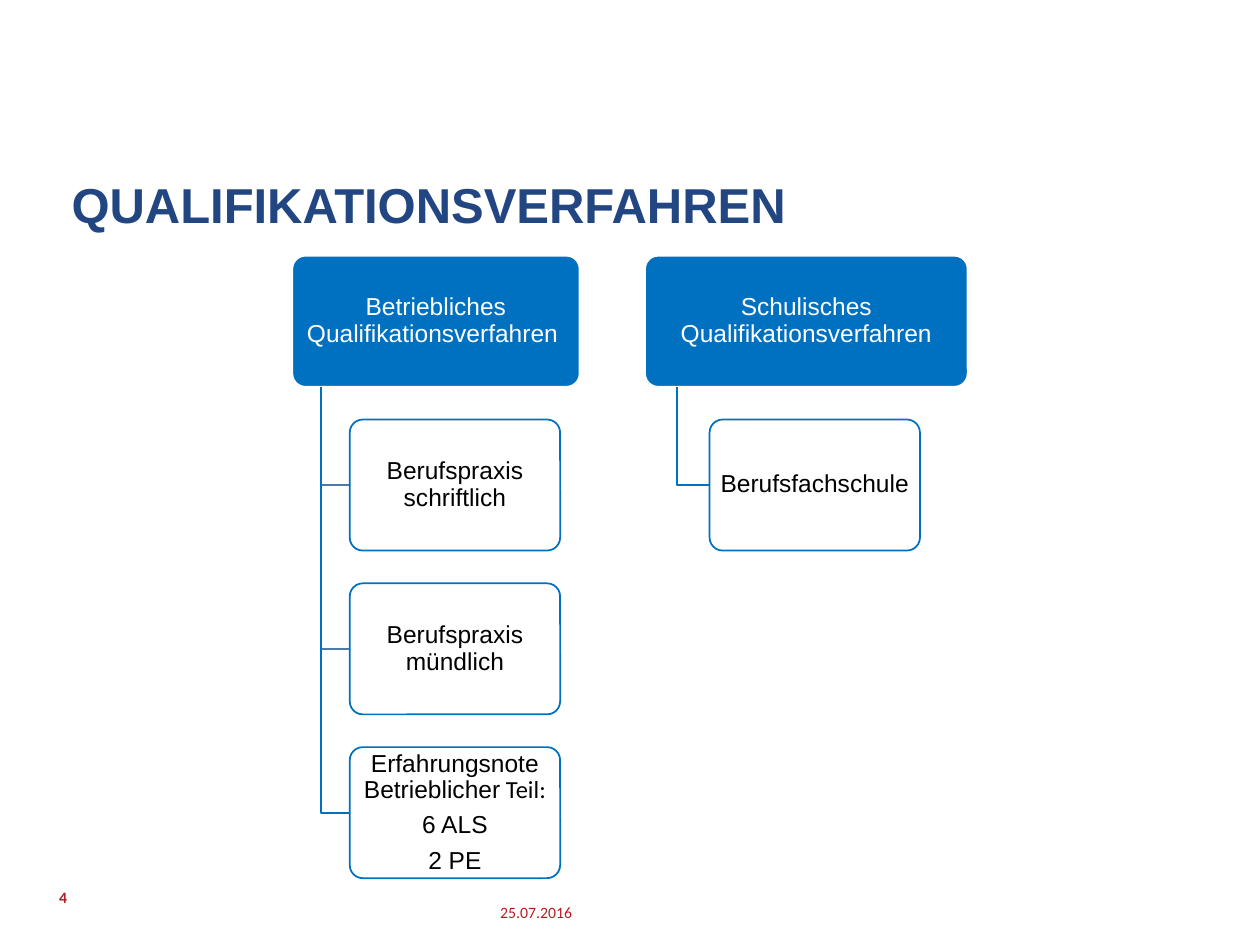
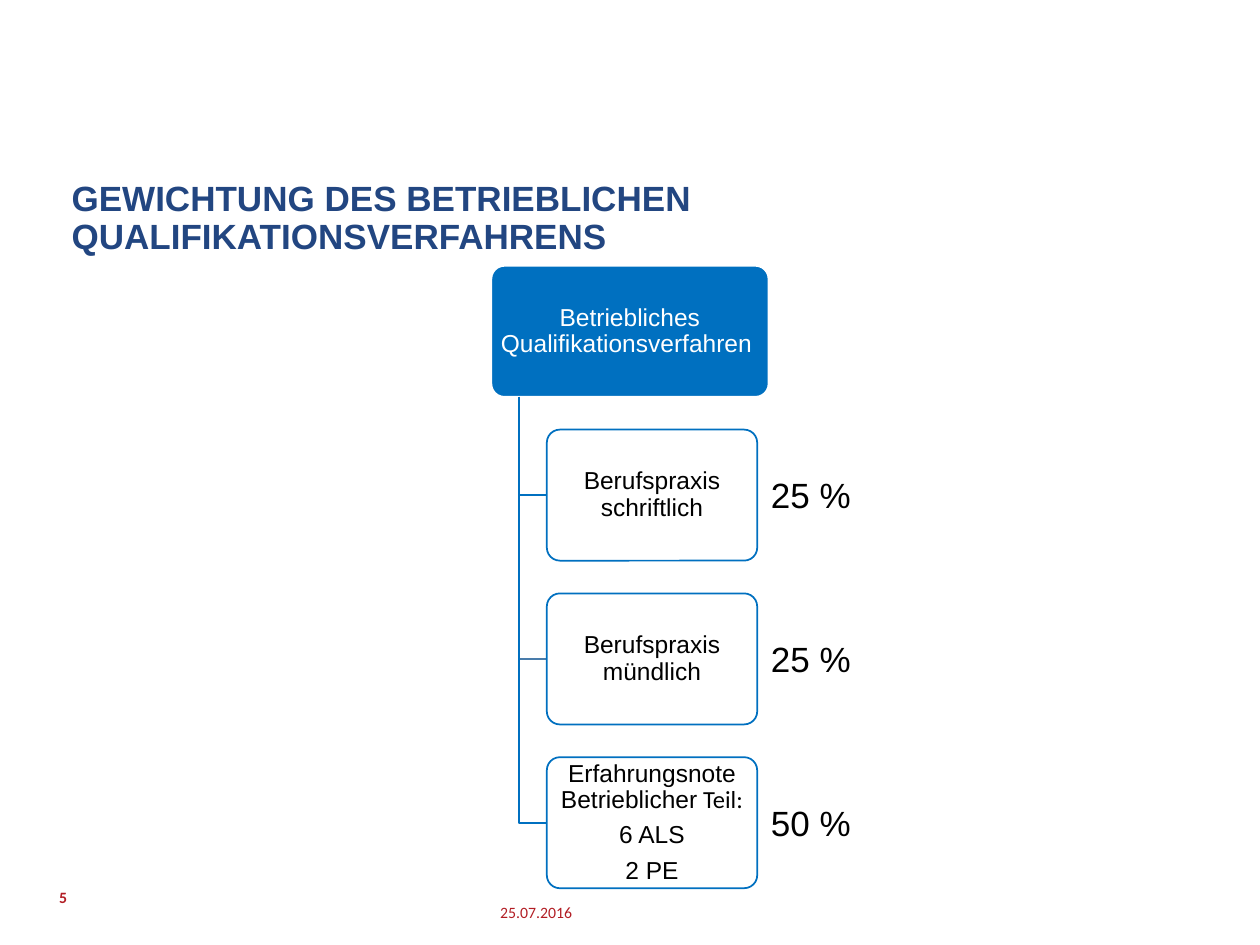
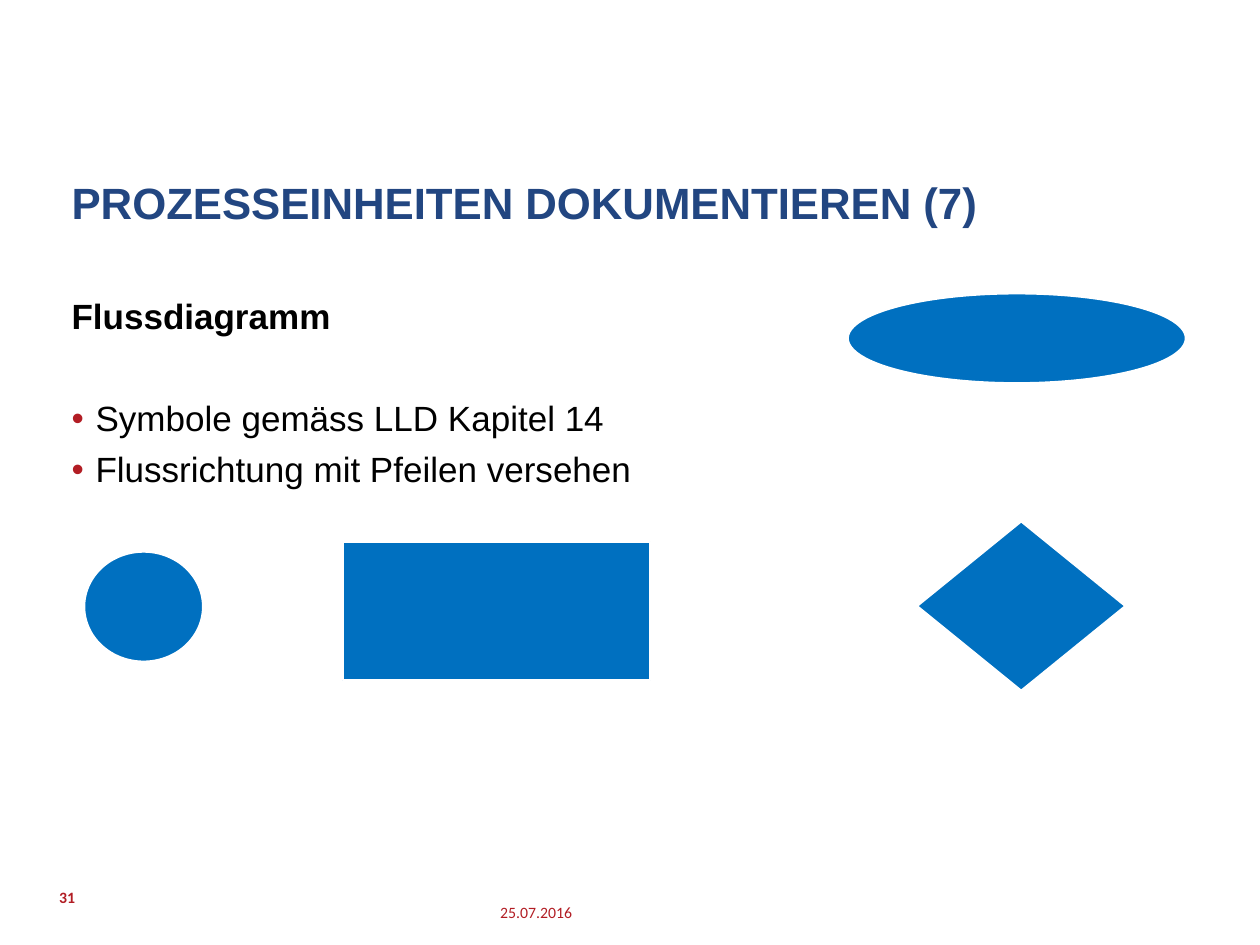
from lxml import etree
from pptx import Presentation
from pptx.dml.color import RGBColor
from pptx.enum.shapes import MSO_SHAPE
from pptx.enum.text import MSO_ANCHOR, PP_ALIGN
from pptx.oxml.ns import qn
from pptx.util import Pt

PX = 9144  # 100 px to the inch

ROUNDED, RECTANGLE, OVAL = MSO_SHAPE.ROUNDED_RECTANGLE, MSO_SHAPE.RECTANGLE, MSO_SHAPE.OVAL
DECISION, JUNCTION = MSO_SHAPE.FLOWCHART_DECISION, MSO_SHAPE.FLOWCHART_CONNECTOR
LEFT, CENTER, RIGHT = PP_ALIGN.LEFT, PP_ALIGN.CENTER, PP_ALIGN.RIGHT
TOP, MIDDLE = MSO_ANCHOR.TOP, MSO_ANCHOR.MIDDLE

BLUE, STEEL, NAVY, RED = "0070C0", "497CAB", "224681", "B21D24"
WHITE, BLACK = "FFFFFF", "000000"
HEAD_FONT, FOOT_FONT = "Arial", "Calibri"

TITLE_BOX = (47, 139, 764, 94)
DATE_BOX = (287, 704, 167, 40)
NUMBER_BOX = (47, 692, 225, 40)
BODY_BOX = (47, 233, 764, 307)
DATE = "25.07.2016"

NODE_HEIGHT, LEVEL_STEP, CHILD_WIDTH = 104, 130, 167

OPERATIONAL = "Betriebliches Qualifikationsverfahren "
WRITTEN = [["Berufspraxis schriftlich"]]
ORAL = [["Berufspraxis mündlich"]]
EXPERIENCE = [["Erfahrungsnote Betrieblicher", (" Teil:", FOOT_FONT)], ["6 ALS"], ["2 PE"]]


def color(hex_code):
    return RGBColor.from_string(hex_code)


def emu(*lengths):
    return [round(length * PX) for length in lengths]


def add_run(paragraph, text, size, hex_code, font=HEAD_FONT, bold=False):
    run = paragraph.add_run()
    run.text = text
    run.font.size = Pt(size)
    run.font.name = font
    run.font.bold = bold
    run.font.color.rgb = color(hex_code)


def set_frame(frame, inset_x, inset_y, anchor, wrap=True):
    frame.margin_left = frame.margin_right = inset_x * PX
    frame.margin_top = frame.margin_bottom = inset_y * PX
    frame.vertical_anchor = anchor
    frame.word_wrap = wrap


def add_line(slide, box, text, size, hex_code, font=HEAD_FONT, bold=False,
             align=LEFT, inset=(10, 5), anchor=TOP, spacing=1.0, wrap=True):
    """Text box holding one paragraph."""
    frame = slide.shapes.add_textbox(*emu(*box)).text_frame
    set_frame(frame, *inset, anchor, wrap)
    paragraph = frame.paragraphs[0]
    paragraph.alignment = align
    paragraph.line_spacing = spacing
    add_run(paragraph, text, size, hex_code, font, bold)


def add_symbol(slide, kind, box, fill=BLUE, outline=WHITE):
    symbol = slide.shapes.add_shape(kind, *emu(*box))
    symbol.shadow.inherit = False
    symbol.fill.solid()
    symbol.fill.fore_color.rgb = color(fill)
    symbol.line.color.rgb = color(outline)
    symbol.line.width = Pt(1)
    return symbol


def add_page(prs, title, title_size, number):
    """Blank slide with the shared title, date and page number."""
    slide = prs.slides.add_slide(prs.slide_layouts[6])
    add_line(slide, TITLE_BOX, title, title_size, NAVY, bold=True, spacing=0.9)
    footer = dict(size=9, hex_code=RED, font=FOOT_FONT, inset=(0, 0), anchor=MIDDLE)
    add_line(slide, DATE_BOX, DATE, align=RIGHT, **footer)
    add_line(slide, NUMBER_BOX, number, bold=True, **footer)
    return slide


def add_node(slide, box, paragraphs, fill, outline, text_color):
    node = add_symbol(slide, ROUNDED, box, fill, outline)
    node.adjustments[0] = 0.1
    frame = node.text_frame
    set_frame(frame, 3, 2, MIDDLE)  # the rounded corners inset the text further
    for index, parts in enumerate(paragraphs):
        paragraph = frame.add_paragraph() if index else frame.paragraphs[0]
        paragraph.alignment = CENTER
        paragraph.line_spacing = 0.9
        if index:
            paragraph.space_before = Pt(5)
        for part in parts:
            text, font = (part, HEAD_FONT) if isinstance(part, str) else part
            add_run(paragraph, text, 14, text_color, font)


def add_branch(slide, trunk, start, end, level, line_color):
    """Angled line from the foot of the root to the side of a child."""
    builder = slide.shapes.build_freeform(*emu(trunk, start))
    builder.add_line_segments([emu(trunk, level), emu(end, level)], close=False)
    branch = builder.convert_to_shape()
    branch.shadow.inherit = False
    branch.fill.background()
    branch.line.color.rgb = color(line_color)
    branch.line.width = Pt(1)


def add_tree(slide, left, top, width, root, children):
    """Root node with children (paragraphs, branch colour, weight) below it."""
    trunk, child_left = left + width * 0.1, left + width * 0.2
    add_node(slide, (left, top, width, NODE_HEIGHT), [[root]], BLUE, WHITE, WHITE)
    for index, (paragraphs, line_color, weight) in enumerate(children, 1):
        child_top = top + index * LEVEL_STEP
        add_branch(slide, trunk, top + NODE_HEIGHT, child_left,
                   child_top + NODE_HEIGHT / 2, line_color)
        add_node(slide, (child_left, child_top, CHILD_WIDTH, NODE_HEIGHT),
                 paragraphs, WHITE, BLUE, BLACK)
        if weight:
            add_line(slide, (child_left + CHILD_WIDTH + 1, child_top + 30, 84, 44),
                     weight, 20, BLACK, wrap=False)


def add_bullet(paragraph):
    properties = paragraph._p.get_or_add_pPr()
    properties.set("marL", str(19 * PX))
    properties.set("indent", str(-19 * PX))
    bullet_color = etree.SubElement(properties, qn("a:buClr"))
    etree.SubElement(bullet_color, qn("a:srgbClr")).set("val", RED)
    etree.SubElement(properties, qn("a:buFont")).set("typeface", HEAD_FONT)
    etree.SubElement(properties, qn("a:buChar")).set("char", "•")


def add_body(slide, box, heading, bullets):
    frame = slide.shapes.add_textbox(*emu(*box)).text_frame
    set_frame(frame, 10, 5, TOP)
    frame.paragraphs[0].line_spacing = 0.9
    add_run(frame.paragraphs[0], heading, 20, BLACK, bold=True)
    for index, bullet in enumerate(bullets):
        paragraph = frame.add_paragraph()
        add_bullet(paragraph)
        paragraph.line_spacing = 0.9
        paragraph.space_before = Pt(7.5 if index else 36.5)
        add_run(paragraph, bullet, 20, BLACK)


def main():
    prs = Presentation()
    prs.slide_width, prs.slide_height = emu(1000, 750)

    # Both parts of the qualification procedure
    overview = add_page(prs, "QUALIFIKATIONSVERFAHREN", 28, "4")
    add_tree(overview, 232, 203, 228, OPERATIONAL,
             [(WRITTEN, STEEL, None), (ORAL, STEEL, None), (EXPERIENCE, BLUE, None)])
    add_tree(overview, 512, 203, 256, "Schulisches Qualifikationsverfahren",
             [([["Berufsfachschule"]], BLUE, None)])

    # Weights of the operational part
    weighting = add_page(
        prs, "GEWICHTUNG DES BETRIEBLICHEN QUALIFIKATIONSVERFAHRENS", 20, "5")
    add_tree(weighting, 390, 211, 220, OPERATIONAL,
             [(WRITTEN, BLUE, "25 %"), (ORAL, STEEL, "25 %"), (EXPERIENCE, BLUE, "50 %")])

    # Flow chart symbols
    flowchart = add_page(prs, "PROZESSEINHEITEN DOKUMENTIEREN (7)", 25, "31")
    add_body(flowchart, BODY_BOX, "Flussdiagramm",
             ["Symbole gemäss LLD Kapitel 14", "Flussrichtung mit Pfeilen versehen"])
    for kind, box in [(OVAL, (673, 233, 268, 71)), (DECISION, (728, 414, 165, 134)),
                      (RECTANGLE, (272, 430, 244, 110)), (JUNCTION, (67, 438, 94, 87))]:
        add_symbol(flowchart, kind, box)

    prs.save("out.pptx")


if __name__ == "__main__":
    main()
